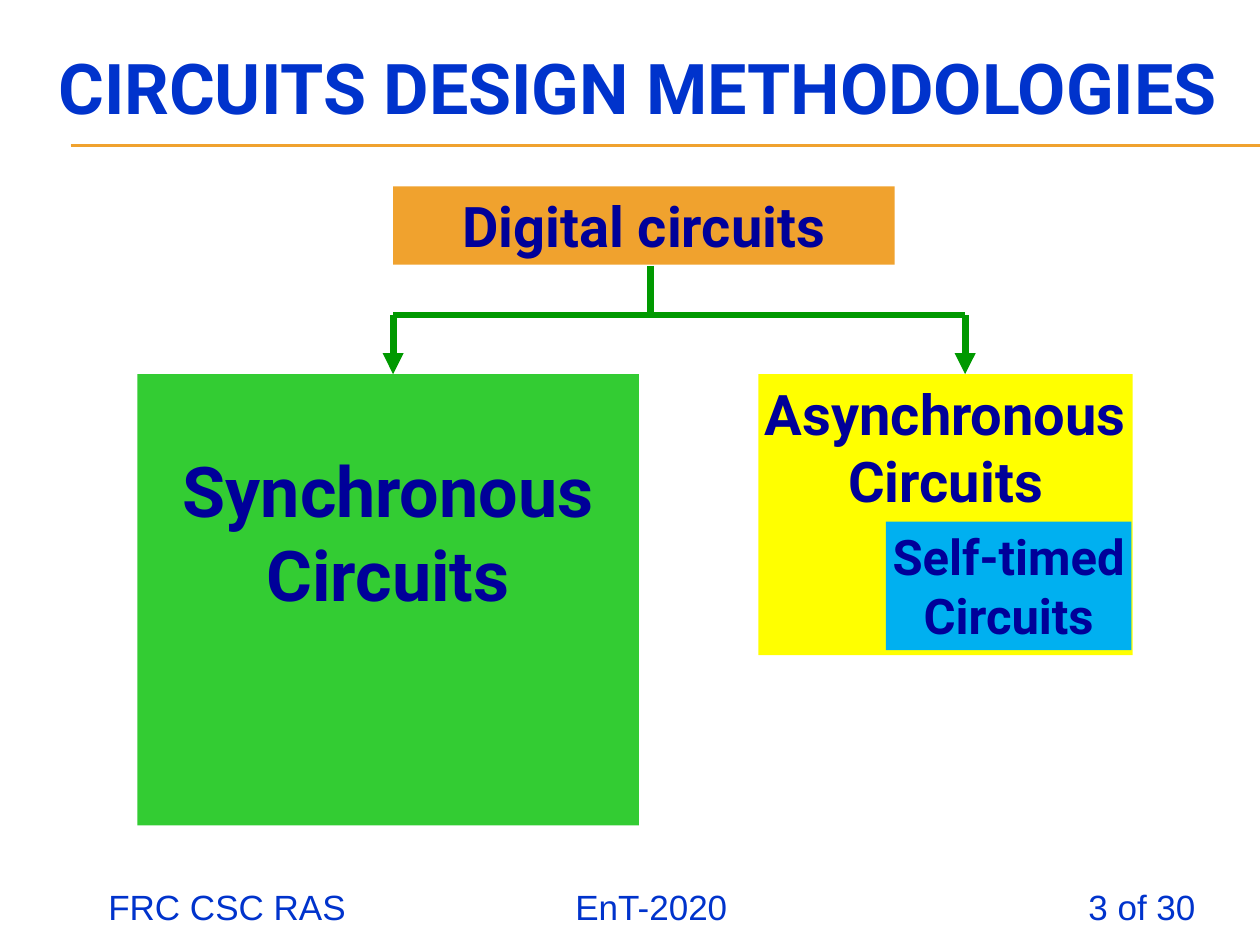
from lxml import etree
from pptx import Presentation
from pptx import util as u
from pptx.dml.color import RGBColor
from pptx.enum import shapes, text
from pptx.oxml.ns import qn

BLUE = RGBColor(0x00, 0x33, 0xCC)
NAVY = RGBColor(0x00, 0x00, 0x99)
AMBER = RGBColor(0xF0, 0xA2, 0x2E)
GREEN = RGBColor(0x33, 0xCC, 0x33)
DARK = RGBColor(0x00, 0x99, 0x00)
YELLOW = RGBColor(0xFF, 0xFF, 0x00)
SKY = RGBColor(0x00, 0xB0, 0xF0)

WIDE, HIGH = u.Inches(10), u.Inches(7.5)
COLS, ROWS = 100, 75


class Deck:
    """Draws on one slide, with lengths in columns and rows of its grid."""
    head, body = "Roboto", "Arial"

    def __init__(self):
        self.prs = Presentation()
        self.prs.slide_width, self.prs.slide_height = WIDE, HIGH
        self.slide = self.prs.slides.add_slide(self.prs.slide_layouts[5])
        self.items = self.slide.shapes

    def grid(self, *spots):
        """Turn alternating columns and rows into slide lengths."""
        units = (WIDE / COLS, HIGH / ROWS)
        return [u.Emu(round(n * units[i % 2])) for i, n in enumerate(spots)]

    def label(self, frame, lines, size, color, align=text.PP_ALIGN.CENTER,
              font=head, bold=True):
        frame.text = "\n".join(lines)
        for para in frame.paragraphs:
            para.alignment = align
            para.font.name, para.font.size = font, u.Pt(size)
            para.font.bold, para.font.color.rgb = bold, color

    def title(self, words, spot):
        shape = self.items.title
        shape.left, shape.top, shape.width, shape.height = self.grid(*spot)
        frame = shape.text_frame
        self.label(frame, [words], 40, BLUE)
        frame.auto_size = text.MSO_AUTO_SIZE.NONE
        frame.vertical_anchor = text.MSO_ANCHOR.MIDDLE

    def box(self, lines, spot, fill, size, drop=0):
        """Add a filled box whose text starts drop rows below its top."""
        shape = self.items.add_shape(shapes.MSO_SHAPE.RECTANGLE, *self.grid(*spot))
        shape.shadow.inherit = False
        shape.fill.solid()
        shape.fill.fore_color.rgb = fill
        shape.line.fill.background()
        frame = shape.text_frame
        self.label(frame, lines, size, NAVY)
        frame.word_wrap = False
        frame.vertical_anchor = text.MSO_ANCHOR.TOP
        frame.margin_left = frame.margin_right = frame.margin_bottom = u.Inches(0.04)
        frame.margin_top = self.grid(0, 0.4 + drop)[1]

    def line(self, spot, color, width, arrow=False):
        link = self.items.add_connector(shapes.MSO_CONNECTOR.STRAIGHT, *self.grid(*spot))
        link.line.color.rgb, link.line.width = color, u.Pt(width)
        props = link._element.spPr
        if arrow:
            etree.SubElement(props.find(qn("a:ln")), qn("a:tailEnd"), type="triangle")
        etree.SubElement(props, qn("a:effectLst"))

    def footer(self, parts, spot, stops):
        """Add parts in one line, the later ones at (column, alignment) stops."""
        frame = self.items.add_textbox(*self.grid(*spot)).text_frame
        self.label(frame, ["\t".join(parts)], 20, BLUE, text.PP_ALIGN.LEFT,
                   self.body, False)
        frame.word_wrap = True
        frame.margin_left = frame.margin_right = 0
        props = frame.paragraphs[0]._p.get_or_add_pPr()
        tabs = etree.Element(qn("a:tabLst"))
        for col, align in stops:
            etree.SubElement(tabs, qn("a:tab"), pos=str(self.grid(col - spot[0])[0]),
                             algn=align)
        props.find(qn("a:defRPr")).addprevious(tabs)


def main():
    deck = Deck()
    for row in (11.5, 11.6):
        deck.line((5.6, row, COLS, row), AMBER, 0.75)
    deck.title("CIRCUITS DESIGN METHODOLOGIES", (3.1, 2.3, 95, 9.2))

    top, bar = 29.7, 25
    left, stem, right = 31.2, 51.6, 76.6
    deck.box(["Digital circuits"], (left, 14.8, 39.8, 6.2), AMBER, 32)
    deck.box(["Synchronous", "Circuits"], (10.9, top, 39.8, 35.8), GREEN, 40, drop=5.4)
    deck.box(["Asynchronous", "Circuits"], (60.2, top, 29.7, 22.3), YELLOW, 32)
    deck.box(["Self-timed", "Circuits"], (70.3, 41.4, 19.5, 10.2), SKY, 28)

    deck.line((stem, 21.1, stem, bar), DARK, 4)
    deck.line((left, bar, right, bar), DARK, 4)
    for col in (left, right):
        deck.line((col, bar, col, top), DARK, 4, arrow=True)

    deck.footer(["FRC CSC RAS", "EnT-2020", "3 of 30"], (8.6, 69.8, 88, 3.2),
                [(51.7, "ctr"), (94.9, "r")])
    deck.prs.save("out.pptx")


if __name__ == "__main__":
    main()
